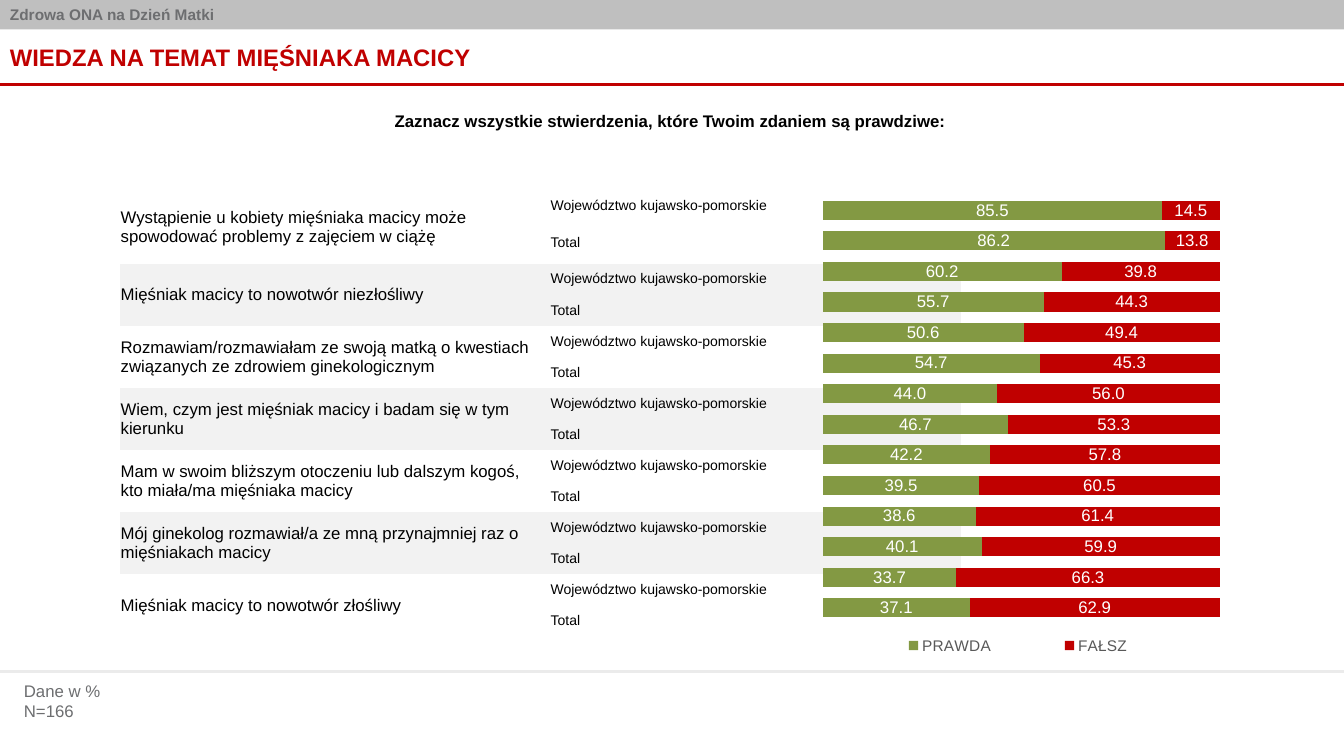
from lxml import etree
from pptx import Presentation
from pptx.chart.data import CategoryChartData
from pptx.dml.color import RGBColor
from pptx.enum.chart import XL_CHART_TYPE as CT, XL_LABEL_POSITION as LP, XL_LEGEND_POSITION as LEG
from pptx.enum.shapes import MSO_CONNECTOR as CON, MSO_SHAPE as SHAPE
from pptx.enum.text import MSO_ANCHOR as ANCHOR, PP_ALIGN as ALIGN
from pptx.oxml import parse_xml
from pptx.oxml.ns import nsdecls, qn
from pptx.util import Pt

COLORS = {"band": "808080", "muted": "6D6E70", "red": "C00000", "green": "839943",
          "rule": "EBEBEB", "stripe": "F2F2F2", "legend": "595959",
          "black": "000000", "white": "FFFFFF"}
FONT = "Arial"
PLAIN_TABLE = "{2D5ABB26-0587-4C30-8999-92F81FD0307C}"
GROUPS = ["Województwo kujawsko-pomorskie", "Total"]
STATEMENTS = [
    "Wystąpienie u kobiety mięśniaka macicy może spowodować problemy z zajęciem w ciążę",
    "Mięśniak macicy to nowotwór niezłośliwy",
    "Rozmawiam/rozmawiałam ze swoją matką o kwestiach związanych ze zdrowiem ginekologicznym",
    "Wiem, czym jest mięśniak macicy i badam się w tym kierunku",
    "Mam w swoim bliższym otoczeniu lub dalszym kogoś, kto miała/ma mięśniaka macicy",
    "Mój ginekolog rozmawiał/a ze mną przynajmniej raz o mięśniakach macicy",
    "Mięśniak macicy to nowotwór złośliwy",
]
TRUE_SHARES = [85.5, 86.2, 60.2, 55.7, 50.6, 54.7, 44, 46.7, 42.2, 39.5, 38.6, 40.1, 33.7, 37.1]
FALSE_SHARES = [round(100 - share, 1) for share in TRUE_SHARES]


def rgb(name):
    return RGBColor.from_string(COLORS[name])


def set_font(font, size, color, bold=False):
    for attr, value in {"name": FONT, "size": Pt(size), "bold": bold}.items():
        setattr(font, attr, value)
    font.color.rgb = rgb(color)


def write(tf, lines, size, color, bold=False, align=ALIGN.LEFT):
    for i, line in enumerate(lines):
        p = tf.paragraphs[0] if i == 0 else tf.add_paragraph()
        p.alignment = align
        r = p.add_run()
        r.text = line
        set_font(r.font, size, color, bold)


def add_text(slide, box, lines, anchor=ANCHOR.TOP, **style):
    tf = slide.shapes.add_textbox(*map(Pt, box)).text_frame
    tf.word_wrap = True
    tf.vertical_anchor = anchor
    write(tf, lines, **style)


def add_header_band(slide, text):
    sp = slide.shapes.add_shape(SHAPE.RECTANGLE, 0, 0, Pt(960), Pt(21))
    sp.shadow.inherit = False
    sp.fill.solid()
    sp.fill.fore_color.rgb = rgb("band")
    color = sp.fill._xPr.find(".//" + qn("a:srgbClr"))
    etree.SubElement(color, qn("a:alpha")).set("val", "50000")
    sp.line.fill.background()
    sp.text_frame.vertical_anchor = ANCHOR.MIDDLE
    write(sp.text_frame, [text], 11, "muted", bold=True)


def add_rule(slide, y, color):
    line = slide.shapes.add_connector(CON.STRAIGHT, 0, Pt(y), Pt(960), Pt(y))
    line.line.width = Pt(2)
    line.line.color.rgb = rgb(color)
    etree.SubElement(line._element.spPr, qn("a:effectLst"))


def set_margins(cell, margin):
    for side in ("left", "top", "right", "bottom"):
        setattr(cell, "margin_" + side, Pt(margin))


def add_statement_table(slide):
    """Each statement spans one row per respondent group; every second one is shaded."""
    n = len(GROUPS)
    rows = len(STATEMENTS) * n
    frame = slide.shapes.add_table(rows, 2, Pt(85.7), Pt(136.1), Pt(601), Pt(312))
    table = frame.table
    table.first_row = table.horz_banding = False
    table._tbl.tblPr.find(qn("a:tableStyleId")).text = PLAIN_TABLE
    for column in table.columns:
        column.width = Pt(300.5)
    for i, row in enumerate(table.rows):
        row.height = Pt(30 if i == 1 else 22.2)
        for cell in row.cells:
            cell.vertical_anchor = ANCHOR.MIDDLE
            if i // n % 2:
                cell.fill.solid()
                cell.fill.fore_color.rgb = rgb("stripe")
            else:
                cell.fill.background()
        set_margins(row.cells[0], 0.5 if i % n == 0 else 0)
        write(row.cells[1].text_frame, [GROUPS[i % n]], 10, "black")
    for i, statement in enumerate(STATEMENTS):
        cell = table.cell(i * n, 0)
        cell.merge(table.cell(i * n + n - 1, 0))
        write(cell.text_frame, [statement], 12, "black")


def place(parent, x, y, w, h, inner=False):
    """Give a chart part a manual layout in fractions of the chart."""
    old = parent.find(qn("c:layout"))
    if old is not None:
        parent.remove(old)
    target = '<c:layoutTarget val="inner"/>' if inner else ""
    parts = "".join(f'<c:{k}Mode val="edge"/>' for k in "xy")
    parts += "".join(f'<c:{k} val="{v}"/>' for k, v in zip("xywh", (x, y, w, h)))
    layout = parse_xml(f'<c:layout {nsdecls("c")}><c:manualLayout>{target}{parts}'
                       "</c:manualLayout></c:layout>")
    parent.insert(0 if inner else 1, layout)


def add_share_chart(slide):
    data = CategoryChartData(number_format="0.0")
    data.categories = [str(i + 1) for i in range(len(TRUE_SHARES))]
    data.add_series("PRAWDA", TRUE_SHARES)
    data.add_series("FAŁSZ", FALSE_SHARES)
    box = map(Pt, (257.8, 94.3, 634.3, 388.1))
    chart = slide.shapes.add_chart(CT.BAR_STACKED_100, *box, data).chart
    set_font(chart.font, 12, "black")
    chart.has_title = False
    chart.category_axis.reverse_order = True
    for axis in (chart.category_axis, chart.value_axis):
        axis.has_major_gridlines = False
        axis.visible = False
    plot = chart.plots[0]
    for attr, value in {"gap_width": 60, "overlap": 100, "vary_by_categories": False}.items():
        setattr(plot, attr, value)
    for series, color in zip(plot.series, ("green", "red")):
        series.format.fill.solid()
        series.format.fill.fore_color.rgb = rgb(color)
        labels = series.data_labels
        for attr, value in {"show_value": True, "position": LP.CENTER,
                            "number_format": "0.0", "number_format_is_linked": False}.items():
            setattr(labels, attr, value)
        set_font(labels.font, 12, "white")
    chart.has_legend = True
    chart.legend.position = LEG.BOTTOM
    chart.legend.include_in_layout = False
    set_font(chart.legend.font, 11, "legend")
    place(chart._chartSpace.chart.plotArea, 0.52, 0.116, 0.447, 0.788, inner=True)
    place(chart.legend._element, 0.54, 0.92, 0.4, 0.05)


def main():
    prs = Presentation()
    prs.slide_width, prs.slide_height = Pt(960), Pt(540)
    slide = prs.slides.add_slide(prs.slide_layouts[6])
    add_header_band(slide, "Zdrowa ONA na Dzień Matki")
    add_rule(slide, 479.5, "rule")
    add_rule(slide, 60.5, "red")
    add_statement_table(slide)
    add_text(slide, (0, 21, 960, 39.5), ["WIEDZA NA TEMAT MIĘŚNIAKA MACICY"],
             anchor=ANCHOR.MIDDLE, size=17, color="red", bold=True)
    add_text(slide, (137.5, 75.6, 682.6, 21.8),
             ["Zaznacz wszystkie stwierdzenia, które Twoim zdaniem są prawdziwe:"],
             size=12, color="black", bold=True, align=ALIGN.CENTER)
    add_share_chart(slide)
    add_text(slide, (10, 482.4, 695.5, 36), ["Dane w %", "N=166"], size=12, color="muted")
    prs.save("out.pptx")


if __name__ == "__main__":
    main()
